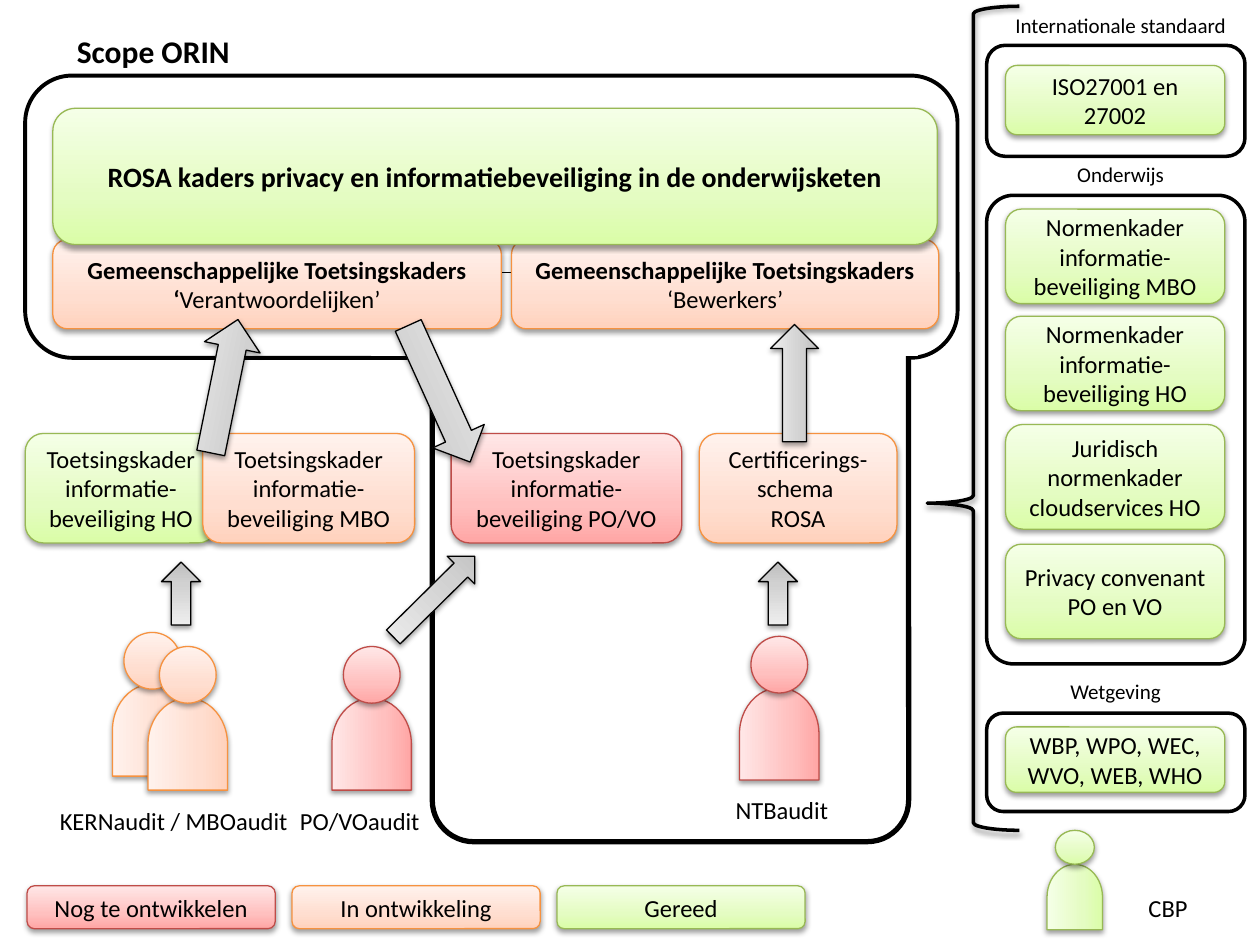
"""Build the slide on privacy and security frameworks in the education chain."""
from copy import deepcopy
from pptx import Presentation
from pptx.dml.color import RGBColor
from pptx.enum.shapes import MSO_SHAPE
from pptx.enum.text import MSO_ANCHOR, MSO_AUTO_SIZE, PP_ALIGN
from pptx.oxml import parse_xml
from pptx.oxml.ns import nsdecls, qn
from pptx.util import Pt

ROUND, RECT, OVAL = MSO_SHAPE.ROUNDED_RECTANGLE, MSO_SHAPE.RECTANGLE, MSO_SHAPE.OVAL
RIGHT, DOWN = MSO_SHAPE.RIGHT_ARROW, MSO_SHAPE.DOWN_ARROW
BRACE, DELAY = MSO_SHAPE.LEFT_BRACE, MSO_SHAPE.FLOWCHART_DELAY
LEFT, MID = PP_ALIGN.LEFT, PP_ALIGN.CENTER
TOP, CENTRE = MSO_ANCHOR.TOP, MSO_ANCHOR.MIDDLE

THEME = {
    "font": "Calibri", "ink": "000000", "paper": "FFFFFF",
    "title": 18, "lead": 16, "body": 14, "small": 12,
    "done": ("DAFDA7", "E4FCC2", "F5FFE7", "98B955"),
    "busy": ("FFD2BD", "FFDED0", "FFF2ED", "F69240"),
    "todo": ("FFA6A5", "FFC0BF", "FFE7E7", "BF4C48"),
    "arrow": ("BDBDBD", "D1D1D1", "EEEEEE", "000000"),
}
STOPS = (0, 0.35, 1)

TITLE = ("Scope ORIN", (36.7, 14.6, 130.3, 28.8))
FRAMES = [
    (ROUND, (14.4, 43.2, 532.8, 161.3), "ink", 2.25, None),
    (ROUND, (247, 157, 272.2, 324), "ink", 3, 0.087),
    (RECT, (212.4, 157, 311.8, 45.4), "paper", 2, None),
]
GROUPS = [
    ("Internationale standaard", 569.5, 3.6, 25.9, 63.4, None,
     [("ISO27001 en 27002", 37.4, 39.6)]),
    ("Onderwijs", 569.5, 88.6, 111.6, 267.8, 0.103,
     [("Normenkader informatie- beveiliging MBO", 119.5, 54),
      ("Normenkader informatie-beveiliging HO", 180.7, 54),
      ("Juridisch normenkader cloudservices HO", 242.6, 59.8),
      ("Privacy convenant PO en VO", 311, 54)]),
    ("Wetgeving", 566.6, 384.5, 407.5, 56.2, None,
     [("WBP, WPO, WEC, WVO, WEB, WHO", 415.4, 37.4)]),
]
SHARED = [
    ("Gemeenschappelijke Toetsingskaders ‘", "Verantwoordelijken’", 30.2, 256.3),
    ("Gemeenschappelijke Toetsingskaders ", "‘Bewerkers’", 292.3, 244.1),
]
LEAD = "ROSA kaders privacy en informatiebeveiliging in de onderwijsketen"
CHECKS = [
    ("Toetsingskader informatie-beveiliging HO", "done", 14.4, 109.4),
    ("Toetsingskader informatie-beveiliging MBO", "busy", 115.9, 121),
    ("Toetsingskader informatie-beveiliging PO/VO", "todo", 257.8, 131.8),
    ("Certificerings- schema \nROSA", "busy", 399.6, 113),
]
LEGEND = [("Nog te ontwikkelen", "todo"), ("In ontwikkeling", "busy"), ("Gereed", "done")]
ARROWS = [
    (RIGHT, (420.5, 205.2, 67, 27.4), 270),
    (RIGHT, (89.3, 204.5, 77.8, 32.4), 281.5),
    (RIGHT, (208.1, 208.8, 85.7, 32.4), 65.6),
    (DOWN, (92.3, 321.2, 22.3, 36), 180),
    (DOWN, (433.4, 321.2, 22.3, 36), 180),
    (DOWN, (236.9, 308.2, 22.3, 65.5), 225.3),
]
BIG = (32.4, 32.4, 45.4, 52.6, 29.5)
MINI = (22.3, 19.4, 31.7, 37.4, 19.4)
PEOPLE = [
    ("busy", 87, 361.4, BIG), ("busy", 107.3, 369.4, BIG), ("todo", 445.3, 363.6, BIG),
    ("todo", 212.4, 369.4, BIG), ("done", 614.2, 474.5, MINI),
]
LABELS = [
    ("KERNaudit / MBOaudit", 14.4, 457.2, 169.9),
    ("NTBaudit", 402.5, 450.7, 88.6),
    ("PO/VOaudit", 161.3, 457.2, 88.6),
    ("CBP", 640.8, 506.9, 53.3),
]


def rgb(name):
    return RGBColor.from_string(THEME.get(name, name))


def shade(shape):
    shape._element.spPr.append(parse_xml(
        f'<a:effectLst {nsdecls("a")}><a:outerShdw blurRad="{Pt(3.1)}" dist="{Pt(1.6)}" '
        'dir="5400000" rotWithShape="0"><a:srgbClr val="000000"><a:alpha val="38000"/>'
        '</a:srgbClr></a:outerShdw></a:effectLst>'))


def write(shape, text, size="body", bold="", align=MID, anchor=CENTRE):
    frame = shape.text_frame
    frame.word_wrap = True
    frame.auto_size = MSO_AUTO_SIZE.NONE
    frame.vertical_anchor = anchor
    for i, line in enumerate(text.split("\n")):
        para = frame.add_paragraph() if i else frame.paragraphs[0]
        para.alignment = align
        font = para.font
        font.name, font.size = THEME["font"], Pt(THEME[size])
        font.color.rgb = rgb("ink")
        if bold:
            head = para.add_run()
            head.text, head.font.bold = bold, True
        if line:
            para.add_run().text = line


def draw(kind, box, line, width, turn=0):
    shape = slide.shapes.add_shape(kind, *map(Pt, box))
    shape.rotation = turn
    shape.line.color.rgb = rgb(line)
    shape.line.width = Pt(width)
    return shape


def panel(kind, box, line, width, adj):
    shape = draw(kind, box, line, width)
    shape.shadow.inherit = False
    shape.fill.solid()
    shape.fill.fore_color.rgb = rgb("paper")
    if adj:
        shape.adjustments[0] = adj


def glow(kind, box, tone, turn=0):
    *tints, edge = THEME[tone]
    shape = draw(kind, box, edge, 0.75, turn)
    shape.fill.gradient()
    shape.fill.gradient_angle = 90
    stops = shape._element.spPr.find(qn("a:gradFill")).find(qn("a:gsLst"))
    stops.append(deepcopy(stops[0]))
    for stop, tint, at in zip(shape.fill.gradient_stops, tints, STOPS):
        stop.color.rgb, stop.position = rgb(tint), at
    shade(shape)
    return shape


def label(text, box, size="body"):
    write(slide.shapes.add_textbox(*map(Pt, box)), text, size, anchor=TOP)


def person(tone, mid, top, sizes):
    wide, high, girth, tall, gap = sizes
    left, base = mid - tall / 2, top + gap + (tall - girth) / 2
    glow(DELAY, (left, base, tall, girth), tone, 270)
    glow(OVAL, (mid - wide / 2, top, wide, high), tone)


deck = Presentation()
deck.slide_width, deck.slide_height = Pt(720), Pt(540)
slide = deck.slides.add_slide(deck.slide_layouts[5])

name, box = TITLE
title = slide.shapes.title
title.left, title.top, title.width, title.height = map(Pt, box)
write(title, "", "title", name, LEFT, TOP)

for item in FRAMES:
    panel(*item)
for bold, text, x, w in SHARED:
    write(glow(ROUND, (x, 136.8, w, 51.1), "busy"), text, bold=bold)
write(glow(ROUND, (30.2, 61.9, 505.4, 77.8), "done"), "", "lead", LEAD)
for text, tone, x, w in CHECKS:
    write(glow(ROUND, (x, 247.7, w, 62.6), tone), text)
for i, (text, tone) in enumerate(LEGEND):
    write(glow(ROUND, (15.5 + 151.4 * i, 506.2, 141.8, 24.5), tone), text)

for text, x, cap, top, high, adj, items in GROUPS:
    panel(ROUND, (563.8, top, 147.6, high), "ink", 2, adj)
    label(text, (x, cap, 141.8, 21.6), "small")
    for part, y, h in items:
        write(glow(ROUND, (574.6, y, 125.3, h), "done"), part)

brace = draw(BRACE, (529.9, 3.6, 52.6, 470.9), "ink", 2)
brace.fill.background()
brace.adjustments[0], brace.adjustments[1] = 0.083, 0.603
shade(brace)

for kind, box, turn in ARROWS:
    glow(kind, box, "arrow", turn)
for item in PEOPLE:
    person(*item)
for text, x, y, w in LABELS:
    label(text, (x, y, w, 24.5))

deck.save("out.pptx")
